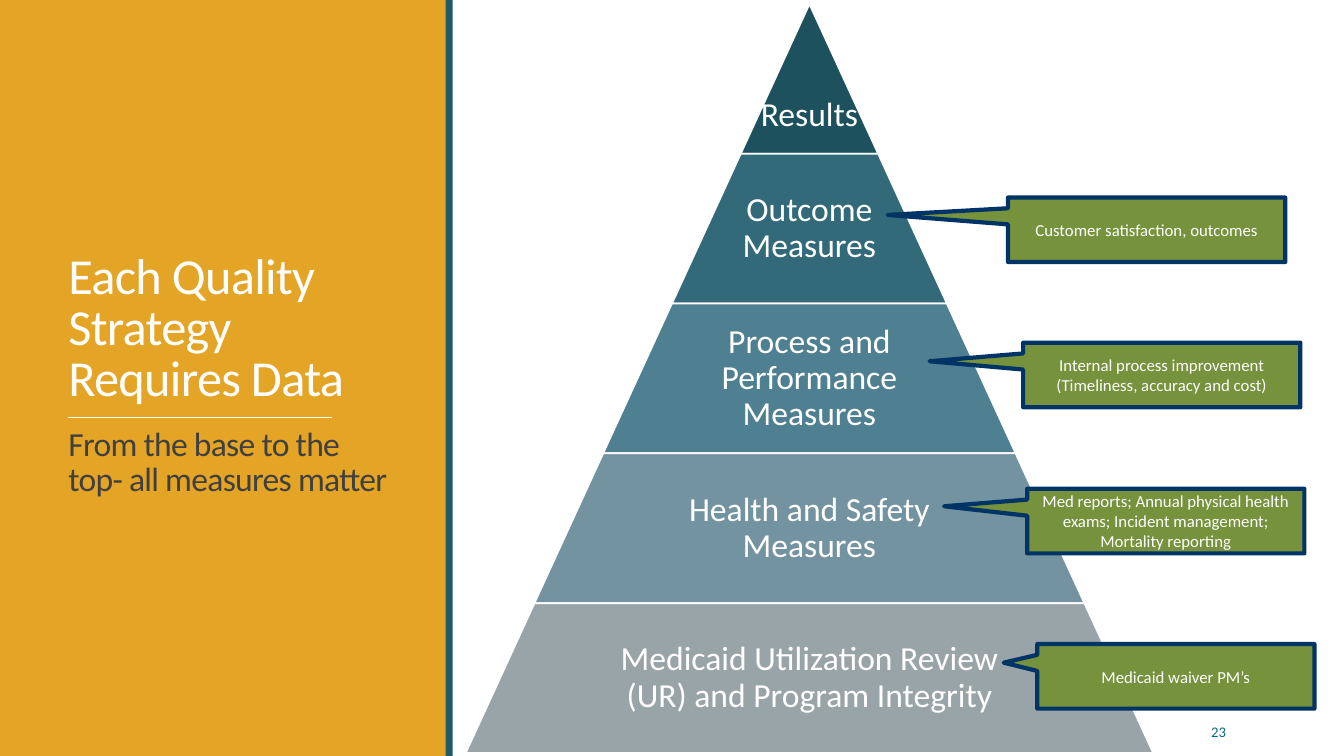
from pptx import Presentation
from pptx.dml.color import RGBColor
from pptx.enum.shapes import MSO_CONNECTOR, MSO_SHAPE as SHAPE
from pptx.enum.text import MSO_ANCHOR as ANCHOR, PP_ALIGN as ALIGN
from pptx.oxml.ns import qn
from pptx.util import Inches, Pt
from lxml import etree

prs = Presentation()
prs.slide_width, prs.slide_height = Inches(13.333), Inches(7.5)
s = prs.slides.add_slide(prs.slide_layouts[6])


def add_shape(kind, x, y, w, h, fill, line=None, width=1):
    sp = s.shapes.add_shape(kind, Inches(x), Inches(y), Inches(w), Inches(h))
    sp.shadow.inherit = False
    sp.fill.solid()
    sp.fill.fore_color.rgb = RGBColor.from_string(fill)
    if line:
        sp.line.color.rgb = RGBColor.from_string(line)
        sp.line.width = Pt(width)
    else:
        sp.line.fill.background()
    return sp


def add_text(tf, text, size, color="FFFFFF", align=ALIGN.CENTER, anchor=ANCHOR.MIDDLE,
             spacing=1.0, before=0, tracking=0, inset=None, new=False):
    tf.word_wrap = True
    tf.vertical_anchor = anchor
    if inset is not None:
        tf.margin_left = tf.margin_right = tf.margin_top = tf.margin_bottom = Inches(inset)
    p = tf.add_paragraph() if new else tf.paragraphs[0]
    p.alignment = align
    p.line_spacing = spacing
    if before:
        p.space_before = Pt(before)
    r = p.add_run()
    r.text = text
    r.font.size, r.font.name = Pt(size), "Calibri"
    r.font.color.rgb = RGBColor.from_string(color)
    if tracking:
        r.font._element.set("spc", str(tracking))


# Left panel with title and subtitle
add_shape(SHAPE.RECTANGLE, 0, 0, 4.43, 7.5, "E4A426")
tf = s.shapes.add_textbox(Inches(0.58), Inches(0.57), Inches(3.37), Inches(6.31)).text_frame
add_text(tf, "Each Quality Strategy Requires Data", 36, align=ALIGN.LEFT,
         spacing=0.85, tracking=-50)
add_text(tf, "From the base to the top- all measures matter", 24, color="404040",
         align=ALIGN.LEFT, spacing=0.85, before=16, tracking=-50, new=True)
add_shape(SHAPE.RECTANGLE, 4.42, 0, 0.07, 7.5, "215968")

# Slide number
tf = s.shapes.add_textbox(Inches(11.07), Inches(7.06), Inches(1.19), Inches(0.4)).text_frame
add_text(tf, "23", 10.5, color="076D82", align=ALIGN.RIGHT)

# Pyramid: each level is one step wider than the level above
CENTER, TOP, STEP, LEVEL_H = 8.03, 0.04, 1.364, 1.486
levels = [
    ("Results", "1E515E"),
    ("Outcome Measures", "336A7A"),
    ("Process and Performance Measures", "4E8091"),
    ("Health and Safety Measures", "72939F"),
    ("Medicaid Utilization Review (UR) and Program Integrity", "99A4A9"),
]
for i, (label, fill) in enumerate(levels):
    w, y = STEP * (i + 1), TOP + LEVEL_H * i
    sp = add_shape(SHAPE.TRAPEZOID, CENTER - w / 2, y, w, LEVEL_H, fill, "FFFFFF", 1.25)
    sp.adjustments[0] = STEP / 2 / min(w, LEVEL_H)
    text_w = w * 0.65 if i else w
    tf = s.shapes.add_textbox(Inches(CENTER - text_w / 2), Inches(y),
                              Inches(text_w), Inches(LEVEL_H)).text_frame
    add_text(tf, label, 24, spacing=0.9, inset=0.03,
             anchor=ANCHOR.MIDDLE if i else ANCHOR.BOTTOM)
    if i == 0:
        tf.margin_bottom = Inches(0.2)

# Callouts: left, top, pointer offsets, text
callouts = [
    (10.29, 6.39, -0.621, -0.212, "Medicaid waiver PM’s"),
    (10.19, 4.85, -0.8, -0.23,
     "Med reports; Annual physical health exams; Incident management; Mortality reporting"),
    (10.15, 3.4, -0.838, -0.212,
     "Internal process improvement (Timeliness, accuracy and cost)"),
    (10, 1.96, -0.934, -0.23, "Customer satisfaction, outcomes"),
]
for x, y, tip_x, tip_y, text in callouts:
    sp = add_shape(SHAPE.RECTANGULAR_CALLOUT, x, y, 2.75, 0.64, "76923C", "003366", 3)
    sp.adjustments[0], sp.adjustments[1] = tip_x, tip_y
    add_text(sp.text_frame, text, 12)

# Rule between title and subtitle
rule = s.shapes.add_connector(MSO_CONNECTOR.STRAIGHT, Inches(0.67), Inches(4.14),
                              Inches(3.29), Inches(4.14))
rule.line.color.rgb = RGBColor.from_string("FFFFFF")
rule.line.width = Pt(1)
etree.SubElement(rule._element.spPr, qn("a:effectLst"))

prs.save("out.pptx")
